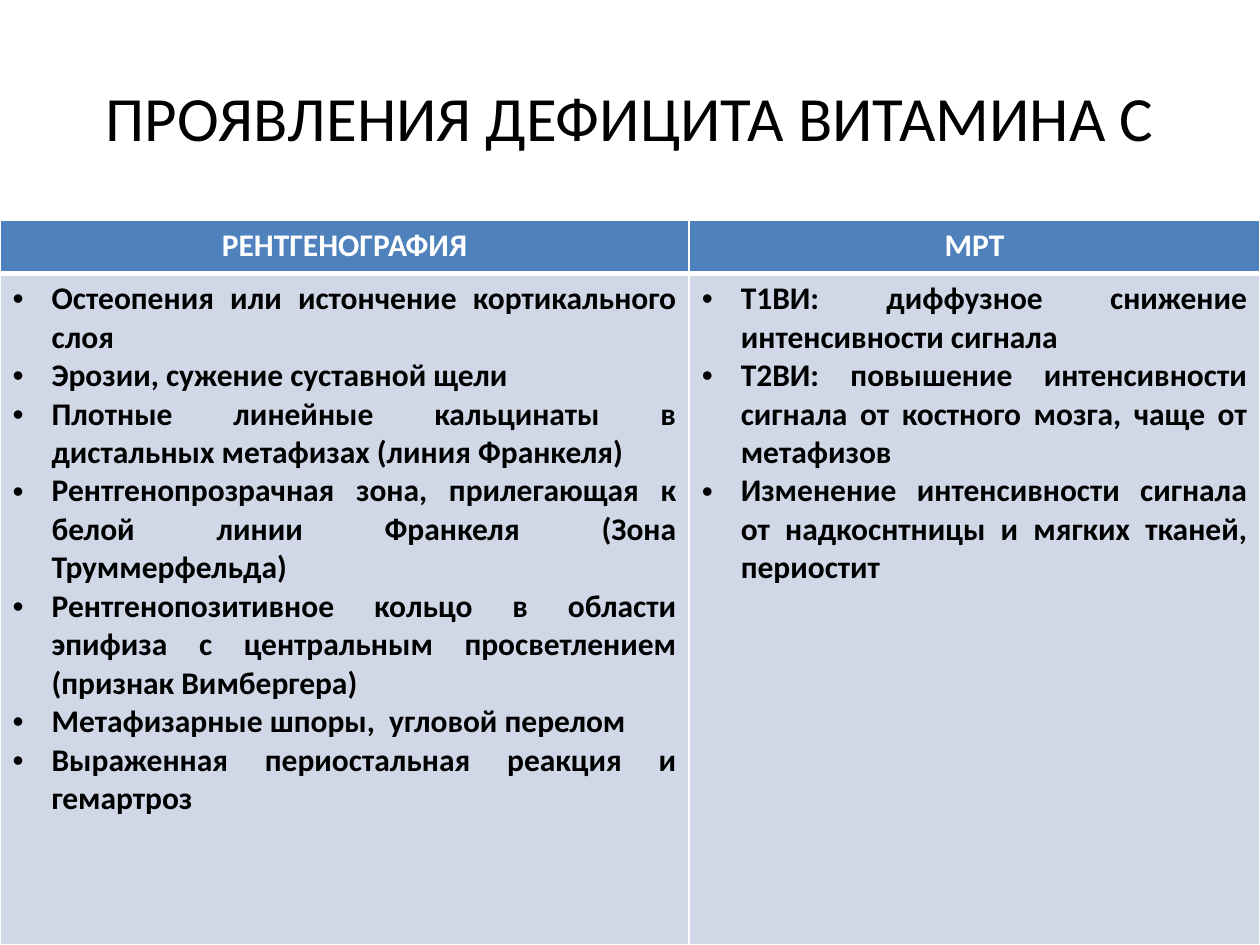
"""Build a slide that tabulates the imaging signs of vitamin C deficiency."""
import lxml.etree
import pptx
import pptx.dml.color
import pptx.enum.text
import pptx.oxml.ns
import pptx.util

Inches = pptx.util.Inches
Pt = pptx.util.Pt
Align = pptx.enum.text.PP_ALIGN
Anchor = pptx.enum.text.MSO_ANCHOR
qn = pptx.oxml.ns.qn

RADIOGRAPHY_SIGNS = [
    "Остеопения или истончение кортикального слоя",
    "Эрозии, сужение суставной щели",
    "Плотные линейные кальцинаты в дистальных метафизах (линия Франкеля)",
    "Рентгенопрозрачная зона, прилегающая к белой линии Франкеля (Зона Труммерфельда)",
    "Рентгенопозитивное кольцо в области эпифиза с центральным просветлением (признак Вимбергера)",
    "Метафизарные шпоры,  угловой перелом",
    "Выраженная периостальная реакция и гемартроз",
]
MRI_SIGNS = [
    "Т1ВИ: диффузное снижение интенсивности сигнала",
    "Т2ВИ: повышение интенсивности сигнала от костного мозга, чаще от метафизов",
    "Изменение интенсивности сигнала от надкоснтницы и мягких тканей, периостит",
]


def color(hex_value):
    return pptx.dml.color.RGBColor.from_string(hex_value)


def write(frame, lines, size=18, ink="000000", bold=False, align=Align.CENTER, bullet=None):
    for index, line in enumerate(lines):
        paragraph = frame.paragraphs[0] if index == 0 else frame.add_paragraph()
        paragraph.alignment = align
        run = paragraph.add_run()
        run.text = line
        run.font.name = "Calibri"
        run.font.size = Pt(size)
        run.font.bold = bold
        run.font.color.rgb = color(ink)
        if bullet:
            properties = paragraph._p.get_or_add_pPr()
            properties.set("marL", str(Inches(0.31)))
            properties.set("indent", str(-Inches(0.31)))
            lxml.etree.SubElement(properties, qn("a:buFont"), typeface="Arial")
            lxml.etree.SubElement(properties, qn("a:buChar"), char=bullet)


class SlideBuilder:
    heading_fill = "4F81BD"
    body_fill = "D0D8E8"
    rule = "FFFFFF"

    def __init__(self, presentation):
        self.slide = presentation.slides.add_slide(presentation.slide_layouts[5])

    def title(self, text):
        heading = self.slide.shapes.title
        heading.left, heading.top = Inches(0.5), Inches(0.3)
        heading.width, heading.height = Inches(9), Inches(1.25)
        heading.text_frame.vertical_anchor = Anchor.MIDDLE
        write(heading.text_frame, [text], size=36)

    def borders(self, cell, top=1, bottom=1):
        properties = cell._tc.get_or_add_tcPr()
        sides = {"a:lnL": 1, "a:lnR": 1, "a:lnT": top, "a:lnB": bottom}
        for position, (side, width) in enumerate(sides.items()):
            line = lxml.etree.Element(qn(side), w=str(Pt(width)))
            fill = lxml.etree.SubElement(line, qn("a:solidFill"))
            lxml.etree.SubElement(fill, qn("a:srgbClr"), val=self.rule)
            properties.insert(position, line)

    def cell(self, cell, lines, fill, top=1, bottom=1, **text_format):
        cell.fill.solid()
        cell.fill.fore_color.rgb = color(fill)
        self.borders(cell, top, bottom)
        write(cell.text_frame, lines, bold=True, **text_format)

    def table(self, columns, widths, heights):
        grid = self.slide.shapes.add_table(
            2, len(columns), Inches(0), Inches(1.75), Inches(sum(widths)), Inches(sum(heights))
        ).table
        for row, height in zip(grid.rows, heights):
            row.height = Inches(height)
        for index, (heading, signs) in enumerate(columns.items()):
            grid.columns[index].width = Inches(widths[index])
            self.cell(grid.cell(0, index), [heading], self.heading_fill, bottom=3, ink="FFFFFF")
            self.cell(grid.cell(1, index), signs, self.body_fill, top=3,
                      align=Align.JUSTIFY, bullet="•")


def main():
    presentation = pptx.Presentation()
    presentation.slide_width, presentation.slide_height = Inches(10), Inches(7.5)
    builder = SlideBuilder(presentation)
    builder.title("ПРОЯВЛЕНИЯ ДЕФИЦИТА ВИТАМИНА С")
    builder.table({"РЕНТГЕНОГРАФИЯ": RADIOGRAPHY_SIGNS, "МРТ": MRI_SIGNS},
                  widths=[5.47, 4.53], heights=[0.42, 5.33])
    presentation.save("out.pptx")


if __name__ == "__main__":
    main()
